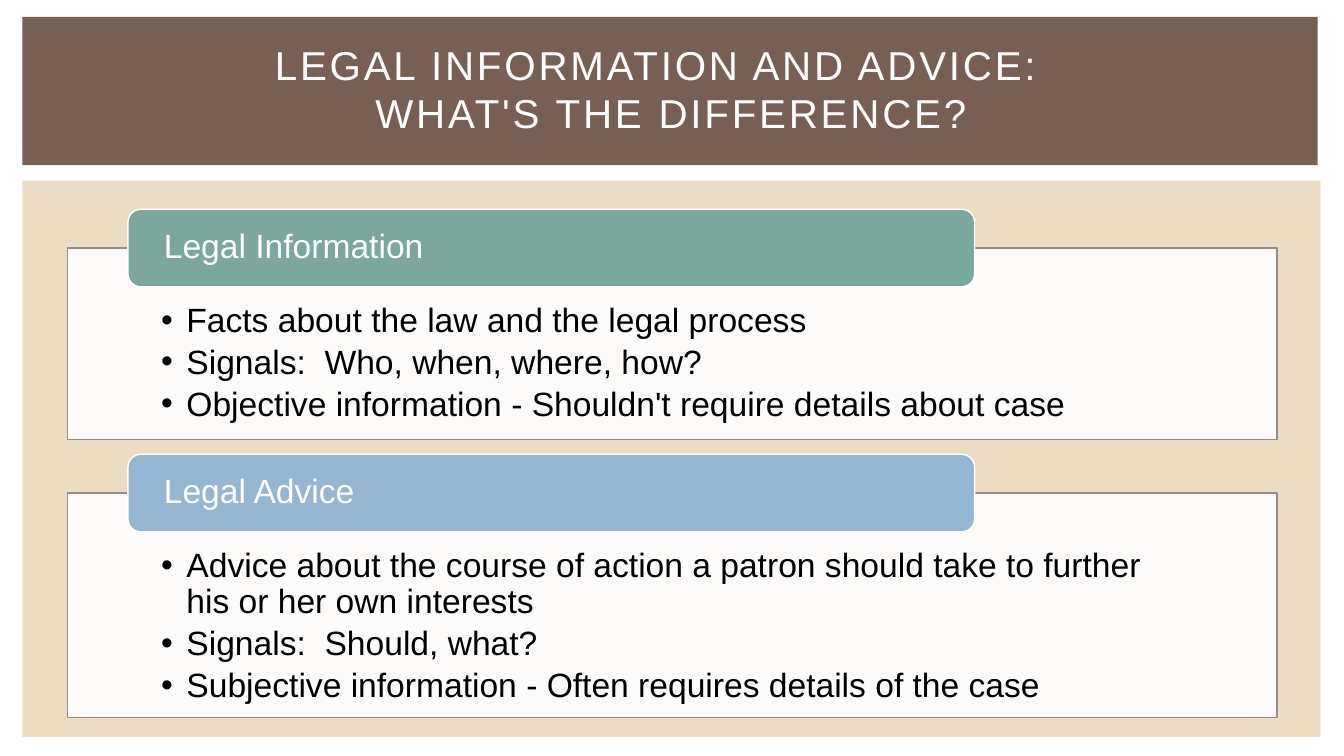
from lxml.etree import SubElement
from pptx import Presentation
from pptx.dml.color import RGBColor
from pptx.enum.shapes import MSO_SHAPE as Preset
from pptx.enum.text import MSO_ANCHOR as Anchor, MSO_AUTO_SIZE as AutoSize, PP_ALIGN as Align
from pptx.oxml.ns import qn
from pptx.util import Pt

# Content
TITLE = "LEGAL INFORMATION AND ADVICE:  \vWHAT'S THE DIFFERENCE?"
SECTIONS = [
    {"heading": "Legal Information", "color": "green", "top": 177.1, "height": 136.8,
     "points": ["Facts about the law and the legal process",
                "Signals:  Who, when, where, how?",
                "Objective information - Shouldn't require details about case"]},
    {"heading": "Legal Advice", "color": "blue", "top": 352.1, "height": 160.6,
     "points": ["Advice about the course of action a patron should take "
                "to further his or her own interests",
                "Signals:  Should, what?",
                "Subjective information - Often requires details of the case"]},
]
COLORS = {"brown": "775F55", "sand": "EBDDC3", "white": "FFFFFF", "black": "000000",
          "gray": "968C8C", "green": "7BA79D", "blue": "94B6D2"}

# Layout in points
BOX_LEFT, BOX_WIDTH = 48.2, 864
TAB_LEFT, TAB_WIDTH, TAB_HEIGHT, TAB_RISE = 91.4, 604.8, 55.4, 27.6
INDENT = 18


def color(name):
    return RGBColor.from_string(COLORS[name])


def set_all(target, values):
    for name, value in values.items():
        setattr(target, name, value)


def add_block(preset, bounds, fill, line=None):
    shape = slide.shapes.add_shape(preset, *map(Pt, bounds))
    shape.shadow.inherit = False
    shape.fill.solid()
    shape.fill.fore_color.rgb = color(fill)
    if line:
        shape.line.color.rgb = color(line)
        shape.line.width = Pt(1)
    else:
        shape.line.fill.background()
    return shape


def set_frame(frame, anchor, left, top, bottom):
    set_all(frame, {"word_wrap": True, "auto_size": AutoSize.NONE, "vertical_anchor": anchor,
                    "margin_left": Pt(left), "margin_right": Pt(left),
                    "margin_top": Pt(top), "margin_bottom": Pt(bottom)})


def format_text(paragraph, size, text_color, values):
    set_all(paragraph, values)
    for run in paragraph.runs:
        set_all(run.font, {"name": "Arial", "size": Pt(size), "bold": False})
        run.font.color.rgb = color(text_color)


def add_bullet(paragraph):
    properties = paragraph._p.get_or_add_pPr()
    properties.set("marL", str(Pt(INDENT)))
    properties.set("indent", str(-Pt(INDENT)))
    SubElement(properties, qn("a:buFont")).set("typeface", "Arial")
    SubElement(properties, qn("a:buChar")).set("char", "•")


presentation = Presentation()
presentation.slide_width, presentation.slide_height = Pt(960), Pt(540)
slide = presentation.slides.add_slide(presentation.slide_layouts[5])

# Background bands
add_block(Preset.RECTANGLE, (16, 129, 927.2, 397.4), "sand")
add_block(Preset.RECTANGLE, (16, 12, 925.2, 106), "brown")

# Title, raised above its band
title = slide.shapes.title
slide.shapes._spTree.append(title._element)
set_all(title, {"left": Pt(31.7), "top": Pt(36), "width": Pt(895.7), "height": Pt(54)})
title.text_frame.text = TITLE
set_frame(title.text_frame, Anchor.MIDDLE, 7.2, 3.6, 3.6)
title_line = title.text_frame.paragraphs[0]
format_text(title_line, 28.8, "white", {"alignment": Align.CENTER})
for run in title_line.runs:
    run.font._element.set("spc", "200")

# Sections: bulleted box with a heading tab over its top edge
for section in SECTIONS:
    box = add_block(Preset.RECTANGLE, (BOX_LEFT, section["top"], BOX_WIDTH, section["height"]),
                    "white", "gray")
    fill_color = box._element.spPr.find(qn("a:solidFill")).find(qn("a:srgbClr"))
    SubElement(fill_color, qn("a:alpha")).set("val", "90000")
    box.text_frame.text = "\n".join(section["points"])
    set_frame(box.text_frame, Anchor.TOP, 67, 39.6, 13.7)
    for paragraph in box.text_frame.paragraphs:
        format_text(paragraph, 24, "black", {"alignment": Align.LEFT, "line_spacing": 0.9,
                                             "space_after": Pt(4)})
        add_bullet(paragraph)

    tab = add_block(Preset.ROUNDED_RECTANGLE,
                    (TAB_LEFT, section["top"] - TAB_RISE, TAB_WIDTH, TAB_HEIGHT),
                    section["color"], "white")
    tab.text_frame.text = section["heading"]
    set_frame(tab.text_frame, Anchor.MIDDLE, 23, 0, 0)
    format_text(tab.text_frame.paragraphs[0], 24, "white",
                {"alignment": Align.LEFT, "line_spacing": 0.9})

presentation.save("out.pptx")
